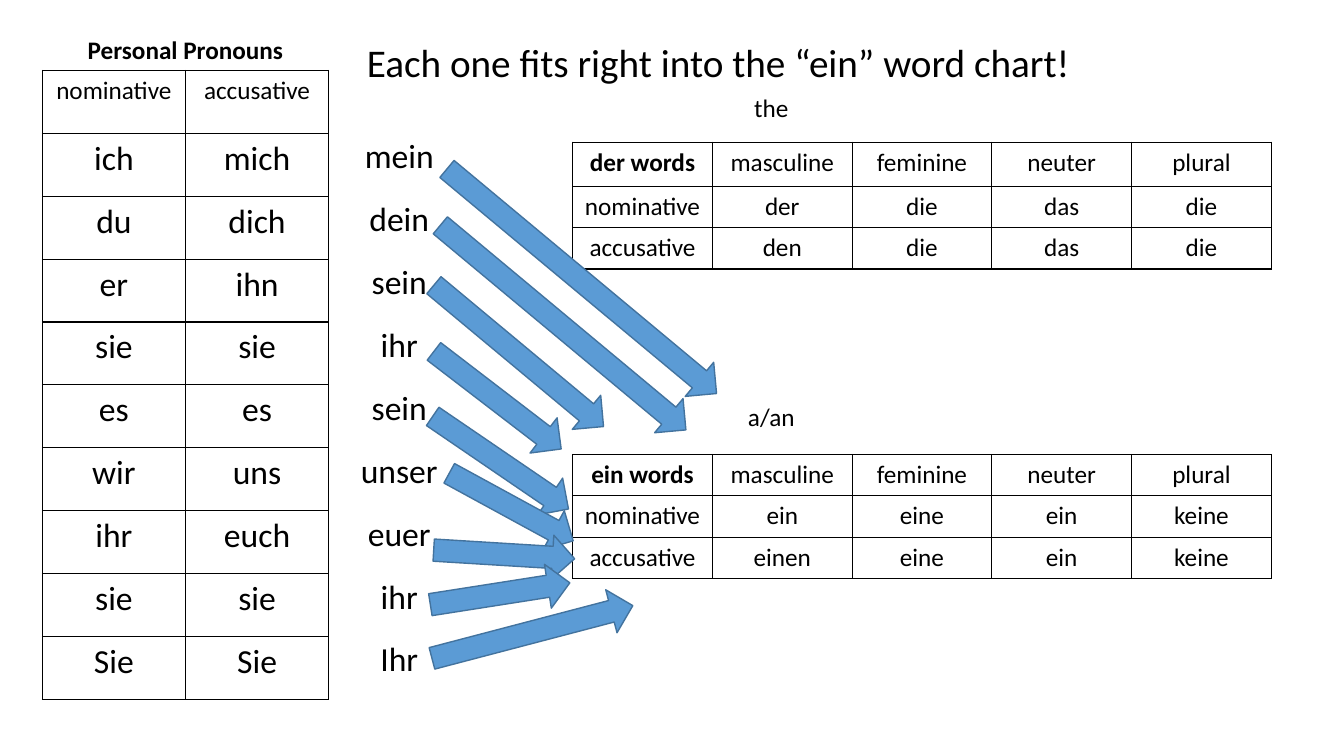
from dataclasses import dataclass

from lxml.etree import SubElement as Sub
from pptx import Presentation as Deck
from pptx.dml.color import RGBColor as Rgb
from pptx.enum.shapes import MSO_SHAPE as Kind
from pptx.enum.text import MSO_ANCHOR as Anchor, PP_ALIGN as Align
from pptx.oxml.ns import qn
from pptx.util import Pt

SCALE = 9144
PLAIN = "{2D5ABB26-0587-4C30-8999-92F81FD0307C}"


@dataclass(frozen=True)
class Theme:
    font: str = "Calibri"
    ink: str = "000000"
    blue: str = "5B9BD5"
    edge: str = "43739E"
    small: int = 18
    large: int = 24
    title: int = 28


def px(*sizes):
    return [round(size * SCALE) for size in sizes]


def write(frame, text, font, size, color, bold=False, align=Align.CENTER):
    frame.word_wrap = True
    para = frame.paragraphs[0]
    para.alignment = align
    run = para.add_run()
    run.text = text
    run.font.name = font
    run.font.size = Pt(size)
    run.font.bold = bold
    run.font.color.rgb = Rgb.from_string(color)


class Page:
    def __init__(self, deck, theme):
        self.theme = theme
        self.shapes = deck.slides.add_slide(deck.slide_layouts[6]).shapes

    def text(self, text, box, size, **style):
        frame = self.shapes.add_textbox(*px(*box)).text_frame
        write(frame, text, self.theme.font, size, self.theme.ink, **style)

    def border(self, cell):
        props = cell._tc.get_or_add_tcPr()
        for side in ("lnL", "lnR", "lnT", "lnB"):
            line = Sub(props, qn(f"a:{side}"), w=str(Pt(1)))
            fill = Sub(line, qn("a:solidFill"))
            Sub(fill, qn("a:srgbClr"), val=self.theme.ink)

    def table(self, rows, left, top, width, highs, size, head=None, bold=False, grid=True):
        count = len(rows[0])
        box = px(left, top, width, sum(highs))
        table = self.shapes.add_table(len(rows), count, *box).table
        table.first_row = table.horz_banding = False
        table._tbl.tblPr.find(qn("a:tableStyleId")).text = PLAIN
        for col in table.columns:
            col.width = px(width / count)[0]
        for r, (row, high) in enumerate(zip(rows, highs)):
            table.rows[r].height = px(high)[0]
            for c, text in enumerate(row):
                cell = table.cell(r, c)
                if grid:
                    self.border(cell)
                cell.fill.background()
                cell.vertical_anchor = Anchor.TOP
                points = head if head and r == 0 else size
                write(cell.text_frame, text, self.theme.font, points,
                      self.theme.ink, bold=bold and r == c == 0)

    def arrow(self, left, top, width, turn):
        arrow = self.shapes.add_shape(Kind.LEFT_ARROW, *px(left, top, width, 44))
        arrow.rotation = turn
        arrow.shadow.inherit = False
        arrow.fill.solid()
        arrow.fill.fore_color.rgb = Rgb.from_string(self.theme.blue)
        arrow.line.color.rgb = Rgb.from_string(self.theme.edge)
        arrow.line.width = Pt(1)


def main():
    deck = Deck()
    deck.slide_width, deck.slide_height = px(1333, 750)
    theme = Theme()
    page = Page(deck, theme)

    genders = "masculine feminine neuter plural".split()
    charts = [
        ("ein words", 451, 41, "ein eine ein keine", "einen eine ein keine"),
        ("der words", 141, 44, "der die das die", "den die das die"),
    ]
    for name, top, high, nom, acc in charts:
        rows = [[name, *genders], ["nominative", *nom.split()],
                ["accusative", *acc.split()]]
        page.table(rows, 568, top, 693, [high, 41, 41], theme.small, bold=True)

    cases = [("nominative", "accusative"), ("ich", "mich"), ("du", "dich"),
             ("er", "ihn"), ("sie", "sie"), ("es", "es"), ("wir", "uns"),
             ("ihr", "euch"), ("sie", "sie"), ("Sie", "Sie")]
    step = 62.4
    page.table(cases, 42, 70, 284, [step] * len(cases), theme.large, head=theme.small)

    page.text("Personal Pronouns", (46, 29, 276, 40), theme.small, bold=True)
    for text, top in (("the", 87), ("a/an", 393)):
        page.text(text, (627, top, 276, 40), theme.small)
    page.text("Each one fits right into the “ein” word chart!",
              (354, 33, 844, 57), theme.title, align=Align.LEFT)

    owners = [[word] for word in "mein dein sein ihr sein unser euer ihr Ihr".split()]
    page.table(owners, 333, 131, 126, [step] * len(owners), theme.large, grid=False)

    arrows = [
        (403, 257, 348, 219.8), (400, 303, 317, 219.8), (405, 331, 219, 219.8),
        (414, 375, 159, 217.5), (415, 437, 163, 214.3), (437, 481, 140, 208.6),
        (430, 528, 140, 183.5), (426, 567, 140, 171.1), (425, 605, 206, 165.3),
    ]
    for arrow in arrows:
        page.arrow(*arrow)
    deck.save("out.pptx")


if __name__ == "__main__":
    main()
